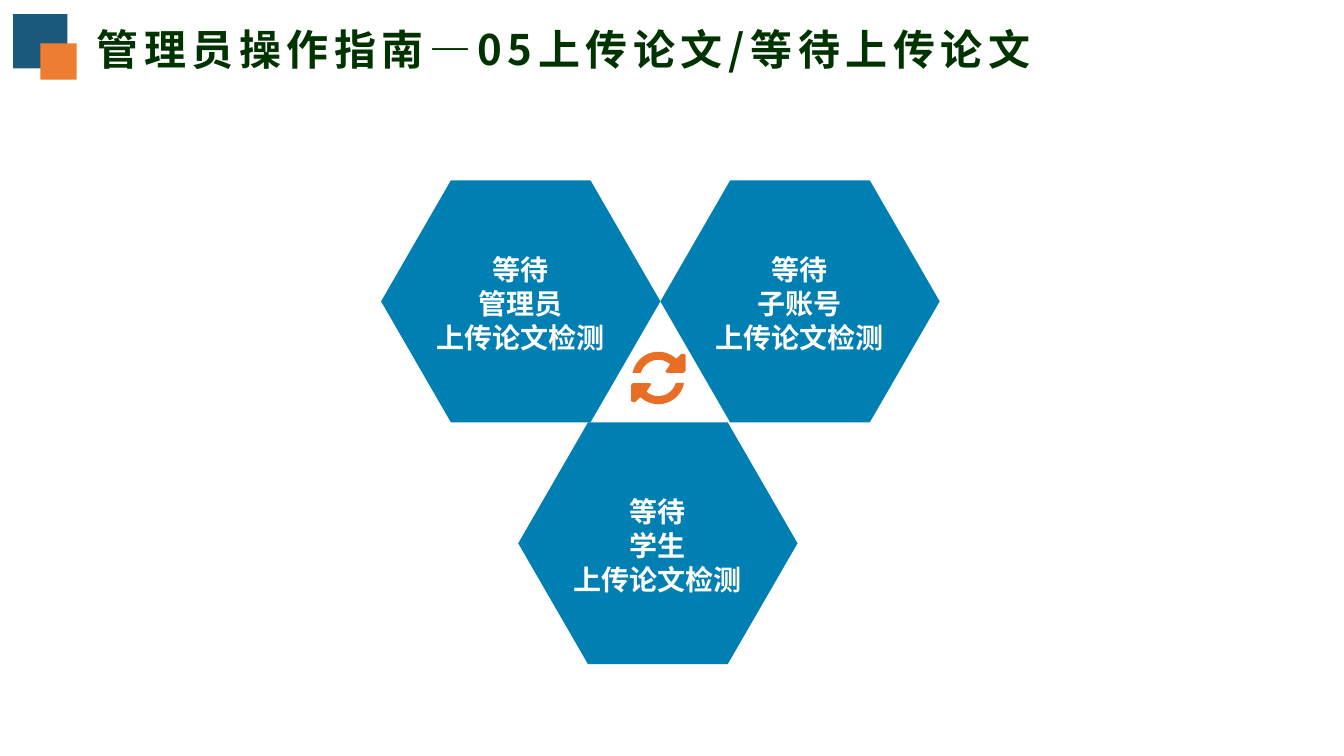
from math import cos, radians, sin

from lxml import etree
from pptx import Presentation
from pptx.dml.color import RGBColor
from pptx.enum import shapes, text
from pptx.oxml import ns
from pptx.util import Inches, Pt

NAVY = RGBColor(0x1C, 0x5A, 0x7C)
ORANGE = RGBColor(0xED, 0x7D, 0x31)
RUST = RGBColor(0xE8, 0x6E, 0x25)
BLUE = RGBColor(0x00, 0x7F, 0xB2)
GREEN = RGBColor(0x00, 0x33, 0x00)
WHITE = RGBColor(0xFF, 0xFF, 0xFF)
FONT = "Noto Sans CJK SC"
HEX_W, HEX_H = 2.77, 2.4
KINDS = shapes.MSO_SHAPE


def arc(radius, start, end, steps=24):
    turns = [radians(start + (end - start) * i / steps) for i in range(steps + 1)]
    return [(radius * cos(t), radius * sin(t)) for t in turns]


class Page:
    def __init__(self, deck):
        self.slide = deck.slides.add_slide(deck.slide_layouts[6])
        self.shapes = self.slide.shapes

    def paint(self, shape, color):
        shape.shadow.inherit = False
        shape.fill.solid()
        shape.fill.fore_color.rgb = color
        shape.line.fill.background()
        return shape

    def block(self, kind, left, top, width, height, color):
        box = [Inches(n) for n in (left, top, width, height)]
        return self.paint(self.shapes.add_shape(kind, *box), color)

    def hexagon(self, left, top):
        shape = self.block(KINDS.HEXAGON, left, top, HEX_W, HEX_H, BLUE)
        shape.adjustments[0] = HEX_W / 4 / HEX_H

    def label(self, words, left, top, width, height, size, color, align, gap=0):
        box = [Inches(n) for n in (left, top, width, height)]
        frame = self.shapes.add_textbox(*box).text_frame
        frame.word_wrap = True
        frame.text = words
        for line in frame.paragraphs:
            line.alignment = align
            line.line_spacing = Pt(size * 1.2)
            for run in line.runs:
                font = run.font
                font.name, font.size, font.bold = FONT, Pt(size), True
                font.color.rgb = color
                props = run._r.get_or_add_rPr()
                if gap:
                    props.set("spc", str(gap * 100))
                etree.SubElement(props, ns.qn("a:ea"), typeface=FONT)

    def cycle(self, x, y):
        head = [(0.23, -0.24), (0.25, -0.24), (0.27, -0.23), (0.27, -0.07),
                (0.25, -0.05), (0.09, -0.05), (0.07, -0.06), (0.08, -0.08)]
        half = arc(0.26, 191, 313) + head + arc(0.18, 311, 196)
        build = None
        for sign in (1, -1):
            spots = [(Inches(x + sign * a), Inches(y + sign * b)) for a, b in half]
            if build is None:
                build = self.shapes.build_freeform(*spots[0])
            else:
                build.move_to(*spots[0])
            build.add_line_segments(spots[1:], close=True)
        self.paint(build.convert_to_shape(), RUST)


def main():
    deck = Presentation()
    deck.slide_width, deck.slide_height = Inches(13.33), Inches(7.5)
    page = Page(deck)
    page.block(KINDS.RECTANGLE, 0.13, 0.14, 0.54, 0.54, NAVY)
    page.block(KINDS.RECTANGLE, 0.4, 0.43, 0.36, 0.36, ORANGE)
    page.label("管理员操作指南—05上传论文/等待上传论文", 0.86, 0.18, 9.81, 0.6,
               30, GREEN, text.PP_ALIGN.LEFT, gap=4)
    page.cycle(6.53, 3.75)
    roles = [("管理员", 3.78, 1.79), ("学生", 5.14, 4.19), ("子账号", 6.55, 1.79)]
    for role, left, top in roles:
        page.hexagon(left, top)
        page.label(f"等待\n{role}\n上传论文检测", left + 0.43, top + 0.67, 1.9, 1.11,
                   20, WHITE, text.PP_ALIGN.CENTER)
    deck.save("out.pptx")


if __name__ == "__main__":
    main()
